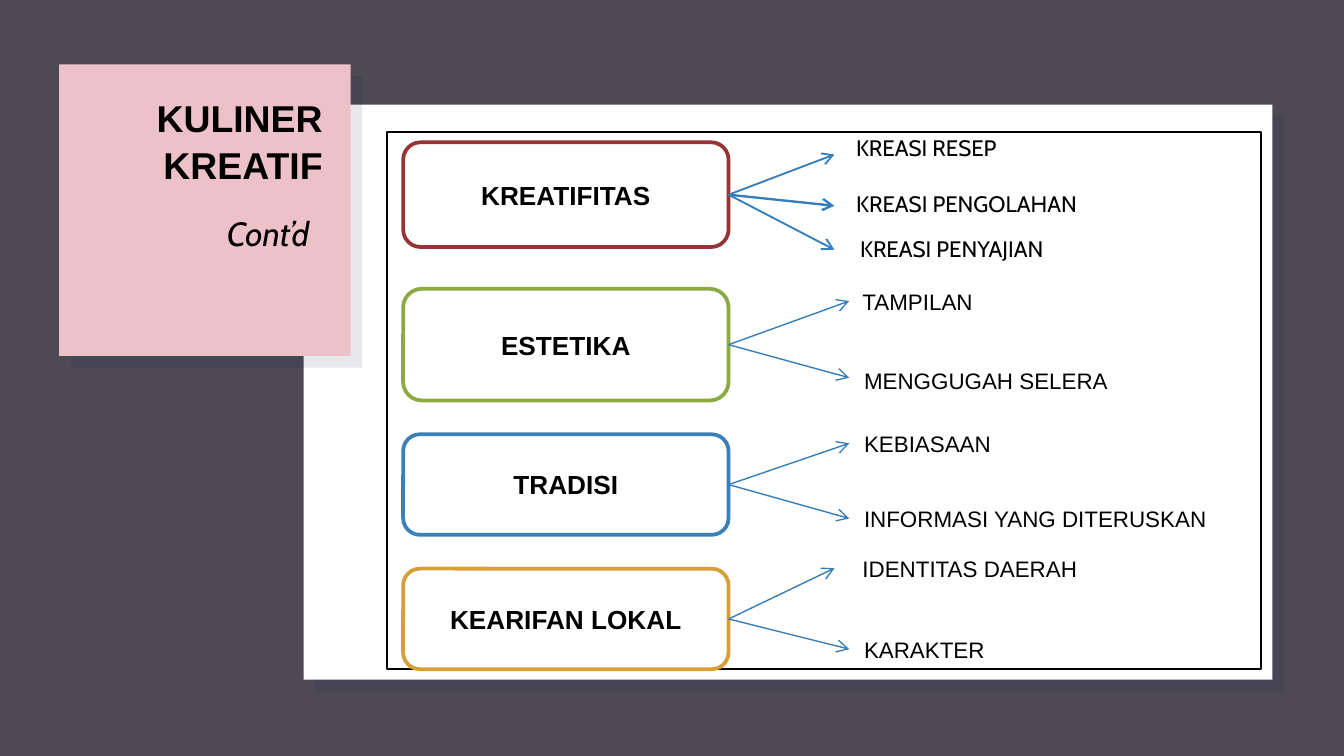
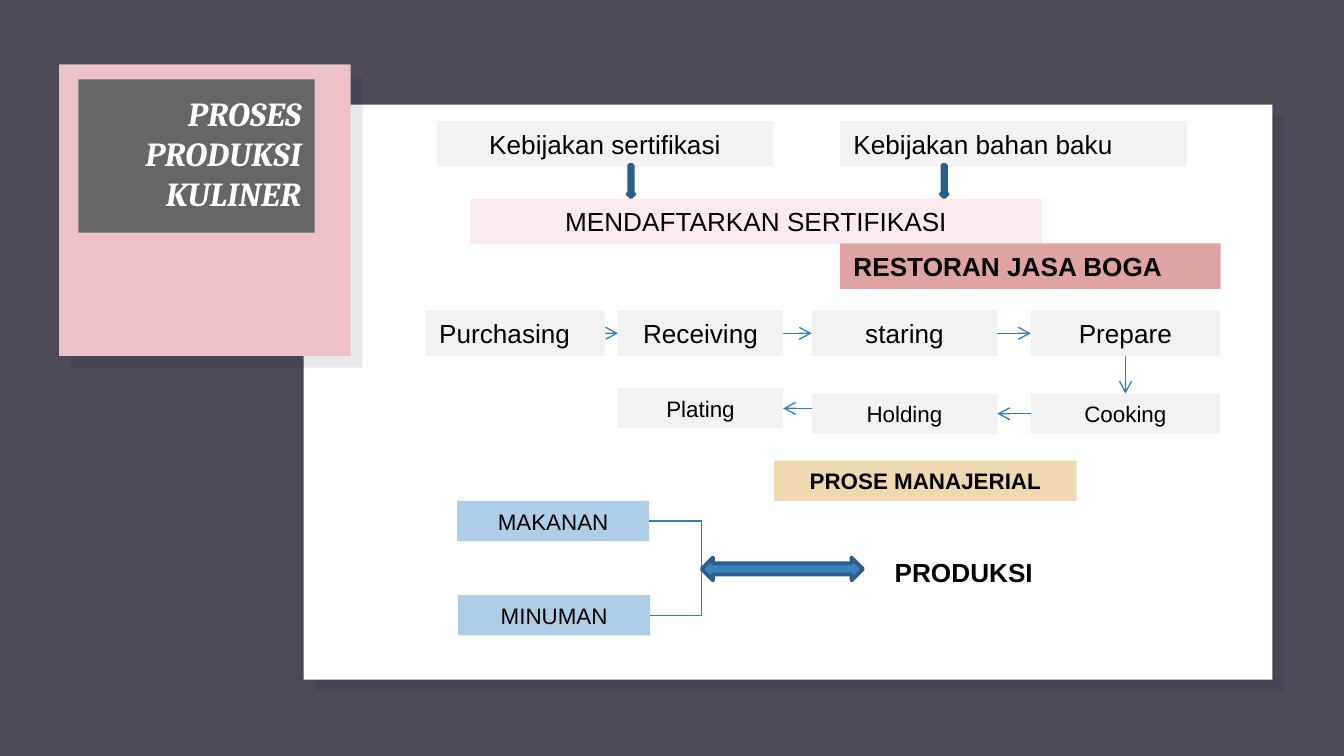
from collections import namedtuple

from lxml.etree import SubElement
from pptx import Presentation
from pptx.dml.color import RGBColor
from pptx.enum.shapes import MSO_CONNECTOR, MSO_SHAPE
from pptx.enum.text import MSO_ANCHOR, PP_ALIGN
from pptx.oxml.ns import qn
from pptx.util import Cm, Pt

BACKGROUND = RGBColor(0x4D, 0x4A, 0x56)
SHADOW = RGBColor(0x1B, 0x1B, 0x46)
WHITE = RGBColor(0xFF, 0xFF, 0xFF)
BLACK = RGBColor(0x00, 0x00, 0x00)
PINK = RGBColor(0xEC, 0xC1, 0xC8)
TITLE_GREY = RGBColor(0x66, 0x66, 0x66)
LIGHT_GREY = RGBColor(0xF2, 0xF2, 0xF2)
PALE_PINK = RGBColor(0xF9, 0xEB, 0xED)
ROSE = RGBColor(0xE0, 0xA3, 0xA3)
SAND = RGBColor(0xEF, 0xD9, 0xB0)
PALE_BLUE = RGBColor(0xAE, 0xCD, 0xE6)
RED = RGBColor(0x96, 0x33, 0x34)
GREEN = RGBColor(0x8B, 0xAB, 0x42)
BLUE = RGBColor(0x3A, 0x81, 0xBA)
ORANGE = RGBColor(0xD8, 0x9F, 0x39)
LINE_BLUE = RGBColor(0x36, 0x7E, 0xB9)
DARK_BLUE = RGBColor(0x2B, 0x5F, 0x8A)

LEFT, CENTER, RIGHT = PP_ALIGN.LEFT, PP_ALIGN.CENTER, PP_ALIGN.RIGHT
BOTTOM_SIDE, LEFT_SIDE, RIGHT_SIDE, TOP_SIDE = 2, 1, 3, 0

Box = namedtuple("Box", "left top width height")
PANEL = Box(5.74, 1.98, 18.31, 10.87)
CARD = Box(1.12, 1.22, 5.51, 5.51)
FRAME = Box(7.32, 2.49, 16.51, 10.16)


def inside(outer, left, top, width, height):
    return Box(outer.left + left, outer.top + top, width, height)


def add_box(slide, box, fill=None, line=None, weight=2, kind=MSO_SHAPE.RECTANGLE):
    shape = slide.shapes.add_shape(kind, *map(Cm, box))
    shape.shadow.inherit = False
    if fill is None:
        shape.fill.background()
    else:
        shape.fill.solid()
        shape.fill.fore_color.rgb = fill
    if line is None:
        shape.line.fill.background()
    else:
        shape.line.color.rgb = line
        shape.line.width = Pt(weight)
    return shape


def write(shape, text, size, align=LEFT, bold=False, italic=False, font="Arial",
          color=BLACK, padding=0.13, anchor=MSO_ANCHOR.TOP, wrap=True):
    frame = shape.text_frame
    frame.text = text
    frame.word_wrap = wrap
    frame.vertical_anchor = anchor
    frame.margin_left = frame.margin_right = Cm(0.25)
    frame.margin_top = frame.margin_bottom = Cm(padding)
    paragraph = frame.paragraphs[0]
    paragraph.alignment = align
    style = paragraph.runs[0].font
    style.name, style.size = font, Pt(size)
    style.bold, style.italic = bold, italic
    style.color.rgb = color
    return paragraph


def add_text(slide, box, text, size, **style):
    return write(slide.shapes.add_textbox(*map(Cm, box)), text, size, **style)


def add_line(slide, start, end, weight=0.75, arrow=True):
    """Each end is a (left, top) point or a (shape, side) pair."""
    joined = [not isinstance(place[0], (int, float)) for place in (start, end)]
    points = [Cm(0) if is_joined else Cm(value)
              for is_joined, place in zip(joined, (start, end)) for value in place]
    connector = slide.shapes.add_connector(MSO_CONNECTOR.STRAIGHT, *points)
    if joined[0]:
        connector.begin_connect(*start)
    if joined[1]:
        connector.end_connect(*end)
    connector.line.color.rgb = LINE_BLUE
    connector.line.width = Pt(weight)
    if arrow:
        SubElement(connector.line._get_or_add_ln(), qn("a:tailEnd"), type="arrow")
    SubElement(connector._element.spPr, qn("a:effectLst"))


def add_raised_box(slide, box, fill):
    shade = add_box(slide, inside(box, 0.22, 0.22, box.width, box.height), SHADOW)
    color = shade._element.spPr.find(qn("a:solidFill"))[0]
    SubElement(color, qn("a:alpha"), val="10000")
    add_box(slide, box, fill)


def add_base(presentation):
    slide = presentation.slides.add_slide(presentation.slide_layouts[6])
    slide.background.fill.solid()
    slide.background.fill.fore_color.rgb = BACKGROUND
    add_raised_box(slide, PANEL, WHITE)
    add_raised_box(slide, CARD, PINK)
    return slide


def add_creative_title(slide, card):
    title = add_text(slide, inside(card, 0.15, 0.28, 5.08, 2.39), "KULINER KREATIF", 20,
                     align=RIGHT, bold=True, padding=0.25)
    title.line_spacing = 1.05
    add_text(slide, inside(card, 2.92, 2.67, 2.31, 1.02), "Cont’d", 18,
             italic=True, font="Cabin", wrap=False)


def add_creative_map(slide, frame):
    add_box(slide, frame, line=BLACK, weight=1)
    cabin = dict(font="Cabin", padding=0.25)
    centered = dict(cabin, align=CENTER)
    branches = [
        ("KREATIFITAS", 0.2, 1.98, RED, [
            ("KREASI RESEP", 8.61, -0.2, 5.08, cabin, 8.45, 0.43, 1),
            ("KREASI PENGOLAHAN", 8.45, 0.86, 5, centered, 8.45, 1.4, 1.25),
            ("KREASI PENYAJIAN", 8.17, 1.7, 5, centered, 8.45, 2.23, 1)]),
        ("ESTETIKA", 2.97, 2.11, GREEN, [
            ("TAMPILAN", 8.73, 2.82, 4.5, {}, 8.73, 3.2, 0.75),
            ("MENGGUGAH SELERA", 8.76, 4.32, 5.51, {}, 8.73, 4.65, 0.75)]),
        ("TRADISI", 5.72, 1.9, BLUE, [
            ("KEBIASAAN", 8.76, 5.51, 4.88, {}, 8.73, 5.89, 0.75),
            ("INFORMASI YANG DITERUSKAN", 8.76, 6.93, 7.19, {}, 8.73, 7.31, 0.75)]),
        ("KEARIFAN LOKAL", 8.26, 1.9, ORANGE, [
            ("IDENTITAS DAERAH", 8.73, 7.87, 6.99, {}, 8.45, 8.25, 0.75),
            ("KARAKTER", 8.76, 9.4, 5.28, {}, 8.73, 9.78, 0.75)]),
    ]
    for name, top, height, color, leaves in branches:
        node = add_box(slide, inside(frame, 0.3, top, 6.15, height), WHITE, color,
                       kind=MSO_SHAPE.FLOWCHART_ALTERNATE_PROCESS)
        write(node, name, 14, align=CENTER, bold=True, anchor=MSO_ANCHOR.MIDDLE)
        for text, left, leaf_top, width, style, tip_left, tip_top, weight in leaves:
            leaf_height = 1.07 if style else 0.76
            add_text(slide, inside(frame, left, leaf_top, width, leaf_height), text, 12, **style)
            tip = (frame.left + tip_left, frame.top + tip_top)
            add_line(slide, (node, RIGHT_SIDE), tip, weight)


def add_process_title(slide, card):
    title = add_box(slide, inside(card, 0.36, 0.28, 4.47, 2.9), TITLE_GREY)
    write(title, "PROSES PRODUKSI KULINER", 18, align=RIGHT, bold=True, italic=True,
          font="Cambria", color=WHITE, padding=0.25)


def add_label(slide, panel, text, left, top, width, fill, size=14, align=CENTER, bold=False):
    height = 0.86 if size == 14 else 0.76
    shape = add_box(slide, inside(panel, left, top, width, height), fill)
    write(shape, text, size, align=align, bold=bold)
    return shape


def add_certification(slide, panel):
    add_label(slide, panel, "Kebijakan sertifikasi", 2.52, 0.31, 6.35, LIGHT_GREY)
    add_label(slide, panel, "Kebijakan bahan baku", 10.14, 0.31, 6.55, LIGHT_GREY, align=LEFT)
    add_label(slide, panel, "MENDAFTARKAN SERTIFIKASI", 3.15, 1.78, 10.8, PALE_PINK)
    for left in (6.12, 12.04):
        add_box(slide, inside(panel, left, 1.14, 0.13, 0.61), BLUE, DARK_BLUE,
                kind=MSO_SHAPE.DOWN_ARROW)
    add_label(slide, panel, "RESTORAN JASA BOGA", 10.14, 2.62, 7.19, ROSE,
              align=LEFT, bold=True)


def add_kitchen_flow(slide, panel):
    columns = [(2.31, 3.38), (5.94, 3.12), (9.6, 3.51), (13.74, 3.58)]
    names = ["Purchasing", "Receiving", "staring", "Prepare"]
    steps = [add_label(slide, panel, name, left, 3.89, width, LIGHT_GREY,
                       align=LEFT if name == "Purchasing" else CENTER)
             for name, (left, width) in zip(names, columns)]
    plating, holding, cooking = [
        add_label(slide, panel, name, left, top, width, LIGHT_GREY, size=12)
        for name, top, (left, width) in zip(
            ["Plating", "Holding", "Cooking"], [5.36, 5.46, 5.46], columns[1:])]
    for step, following in zip(steps, steps[1:]):
        add_line(slide, (step, RIGHT_SIDE), (following, LEFT_SIDE))
    add_line(slide, (steps[-1], BOTTOM_SIDE), (cooking, TOP_SIDE))
    add_line(slide, (cooking, LEFT_SIDE), (holding, RIGHT_SIDE))
    add_line(slide, (panel.left + 9.6, panel.top + 5.74), (plating, RIGHT_SIDE))


def add_production(slide, panel):
    add_label(slide, panel, "PROSE MANAJERIAL", 8.89, 6.73, 5.72, SAND, size=12, bold=True)
    joint = panel.left + 7.52
    corners = []
    for name, left, top in (("MAKANAN", 2.9, 7.49), ("MINUMAN", 2.92, 9.27)):
        label = add_label(slide, panel, name, left, top, 3.63, PALE_BLUE, size=12)
        corner = (joint, panel.top + top + 0.38)
        add_line(slide, (label, RIGHT_SIDE), corner, arrow=False)
        corners.append(corner)
    add_line(slide, *corners, arrow=False)
    add_text(slide, inside(panel, 10.57, 8.41, 3.81, 0.86), "PRODUKSI", 14,
             align=CENTER, bold=True)
    add_box(slide, inside(panel, 7.52, 8.56, 3.05, 0.43), BLUE, DARK_BLUE,
            kind=MSO_SHAPE.LEFT_RIGHT_ARROW)


def build_creative_slide(presentation):
    slide = add_base(presentation)
    add_creative_title(slide, CARD)
    add_creative_map(slide, FRAME)


def build_process_slide(presentation):
    slide = add_base(presentation)
    add_process_title(slide, CARD)
    add_certification(slide, PANEL)
    add_kitchen_flow(slide, PANEL)
    add_production(slide, PANEL)


def main():
    presentation = Presentation()
    presentation.slide_width = Cm(25.4)
    presentation.slide_height = Cm(14.29)
    build_creative_slide(presentation)
    build_process_slide(presentation)
    presentation.save("out.pptx")


if __name__ == "__main__":
    main()
